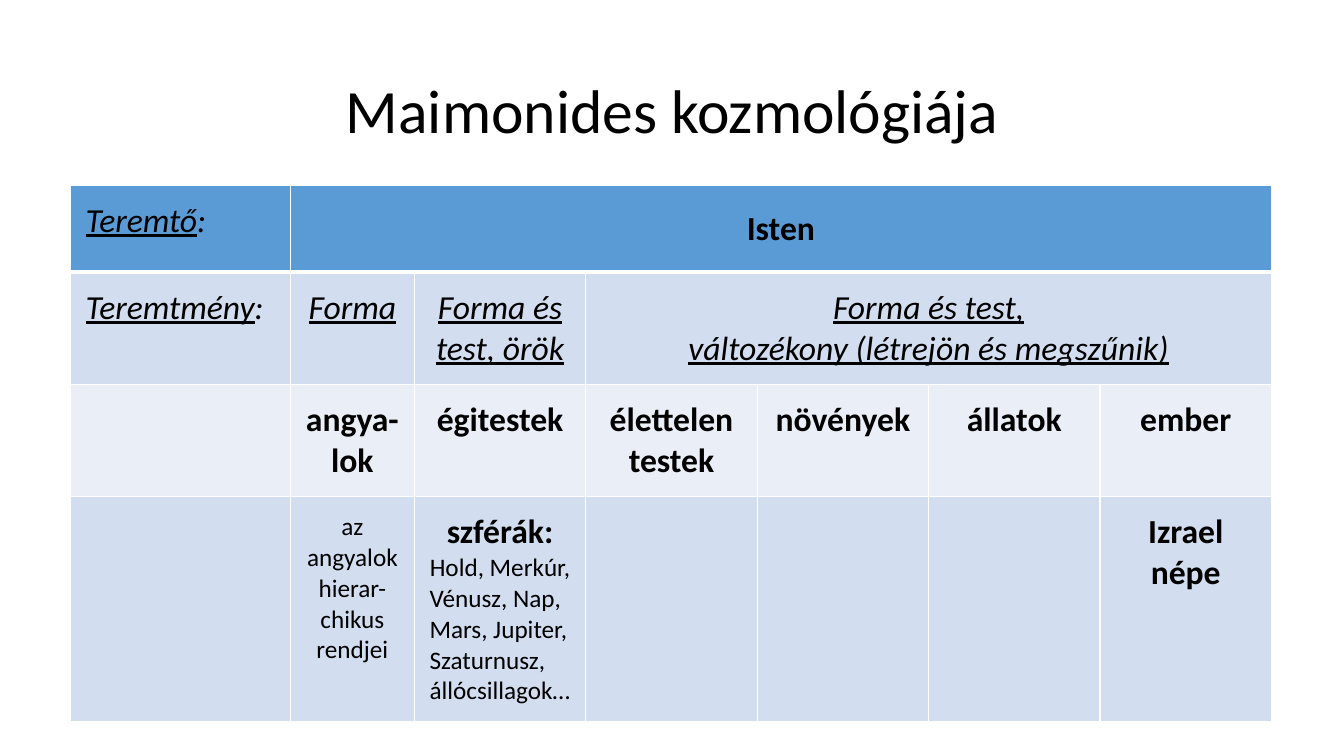
from dataclasses import dataclass

import lxml.etree
import pptx
import pptx.dml.color
import pptx.enum.text
import pptx.oxml.ns
import pptx.util

Inches = pptx.util.Inches
Pt = pptx.util.Pt
ALIGN = pptx.enum.text.PP_ALIGN
ANCHOR = pptx.enum.text.MSO_ANCHOR

FONT = "Calibri"
BLACK = "000000"
WHITE = "FFFFFF"
ROW_FILLS = ["5B9BD5", "D2DEEF", "EAEFF7", "D2DEEF"]
ROW_HEIGHTS = [0.86, 1.1, 1.1, 2.2]
COLUMN_WIDTHS = [2.18, 1.23] + [1.7] * 5
CELL_MARGIN = 0.15


@dataclass(frozen=True)
class Style:
    size: int = 24
    bold: bool = False
    italic: bool = False
    underline: bool = False


LABEL = Style(italic=True, underline=True)
LABEL_COLON = Style(italic=True)
HEADING = Style(bold=True)
DETAIL = Style(size=18)


@dataclass(frozen=True)
class Line:
    """A paragraph made of (text, style) pieces."""
    pieces: list[tuple[str, Style]]
    align: ALIGN = ALIGN.CENTER


@dataclass(frozen=True)
class Entry:
    row: int
    column: int
    lines: list[Line]
    span: int = 1
    anchor: ANCHOR = ANCHOR.TOP


def single(row: int, column: int, text: str, style: Style, span: int = 1,
           anchor: ANCHOR = ANCHOR.TOP) -> Entry:
    return Entry(row, column, [Line([(text, style)])], span, anchor)


def row_label(row: int, text: str) -> Entry:
    return Entry(row, 0, [Line([(text, LABEL), (":", LABEL_COLON)], ALIGN.LEFT)])


ENTRIES = [
    row_label(0, "Teremtő"),
    single(0, 1, "Isten", HEADING, span=6, anchor=ANCHOR.MIDDLE),
    row_label(1, "Teremtmény"),
    single(1, 1, "Forma", LABEL),
    single(1, 2, "Forma és test, örök", LABEL),
    single(1, 3, "Forma és test,\nváltozékony (létrejön és megszűnik)", LABEL, span=4),
    *[single(2, column, text, HEADING) for column, text in enumerate(
        ["angya-lok", "égitestek", "élettelen testek", "növények", "állatok", "ember"], 1)],
    single(3, 1, "az angyalok hierar-chikus rendjei", DETAIL),
    Entry(3, 2, [
        Line([("szférák:\n", HEADING), ("Hold, Merkúr,", DETAIL)]),
        Line([("Vénusz, Nap, Mars, Jupiter, Szaturnusz, állócsillagok…", DETAIL)], ALIGN.LEFT),
    ]),
    single(3, 6, "Izrael népe", HEADING),
]


def colour(value: str) -> pptx.dml.color.RGBColor:
    return pptx.dml.color.RGBColor.from_string(value)


def set_font(font: pptx.text.text.Font, style: Style) -> None:
    font.name = FONT
    font.size = Pt(style.size)
    font.bold = style.bold
    font.italic = style.italic
    font.underline = style.underline
    font.color.rgb = colour(BLACK)


def write_line(paragraph: pptx.text.text._Paragraph, line: Line) -> None:
    paragraph.alignment = line.align
    styles = {style for _, style in line.pieces}
    if len(styles) == 1:
        set_font(paragraph.font, line.pieces[0][1])
    for text, style in line.pieces:
        for index, part in enumerate(text.split("\n")):
            if index:
                paragraph.add_line_break()
            if part:
                run = paragraph.add_run()
                run.text = part
                if len(styles) > 1:
                    set_font(run.font, style)


def format_cell(cell: pptx.table._Cell, row: int) -> None:
    """Draw white borders, thicker under the header row, and fill the cell."""
    properties = cell._tc.get_or_add_tcPr()
    widths = {"a:lnL": 1, "a:lnR": 1, "a:lnT": 3 if row == 1 else 1, "a:lnB": 3 if row == 0 else 1}
    for tag, width in widths.items():
        border = lxml.etree.SubElement(properties, pptx.oxml.ns.qn(tag), w=str(Pt(width)))
        fill = lxml.etree.SubElement(border, pptx.oxml.ns.qn("a:solidFill"))
        lxml.etree.SubElement(fill, pptx.oxml.ns.qn("a:srgbClr"), val=WHITE)
    cell.fill.solid()
    cell.fill.fore_color.rgb = colour(ROW_FILLS[row])


def fill_entry(table: pptx.table.Table, entry: Entry) -> None:
    cell = table.cell(entry.row, entry.column)
    if entry.span > 1:
        cell.merge(table.cell(entry.row, entry.column + entry.span - 1))
    cell.vertical_anchor = entry.anchor
    cell.margin_left = cell.margin_right = Inches(CELL_MARGIN)
    cell.margin_top = cell.margin_bottom = Inches(CELL_MARGIN)
    frame = cell.text_frame
    for index, line in enumerate(entry.lines):
        write_line(frame.add_paragraph() if index else frame.paragraphs[0], line)


def add_title(slide: pptx.slide.Slide) -> None:
    title = slide.shapes.title
    title.left, title.top = Inches(0.92), Inches(0.4)
    title.width, title.height = Inches(11.5), Inches(1.45)
    frame = title.text_frame
    frame.auto_size = pptx.enum.text.MSO_AUTO_SIZE.NONE
    frame.vertical_anchor = ANCHOR.MIDDLE
    paragraph = frame.paragraphs[0]
    paragraph.line_spacing = 0.9
    write_line(paragraph, Line([("Maimonides kozmológiája", Style(size=44))]))


def add_cosmology_table(slide: pptx.slide.Slide) -> None:
    table = slide.shapes.add_table(
        len(ROW_HEIGHTS), len(COLUMN_WIDTHS), Inches(0.7), Inches(1.84),
        Inches(sum(COLUMN_WIDTHS)), Inches(sum(ROW_HEIGHTS))).table
    table.first_row = False
    table.horz_banding = False
    for column, width in zip(table.columns, COLUMN_WIDTHS):
        column.width = Inches(width)
    for index, height in enumerate(ROW_HEIGHTS):
        table.rows[index].height = Inches(height)
        for cell in table.rows[index].cells:
            format_cell(cell, index)
    for entry in ENTRIES:
        fill_entry(table, entry)


def main() -> None:
    presentation = pptx.Presentation()
    presentation.slide_width = Inches(13.33)
    presentation.slide_height = Inches(7.5)
    slide = presentation.slides.add_slide(presentation.slide_layouts[5])
    # Title
    add_title(slide)
    # Table of creator and creatures
    add_cosmology_table(slide)
    presentation.save("out.pptx")


if __name__ == "__main__":
    main()
